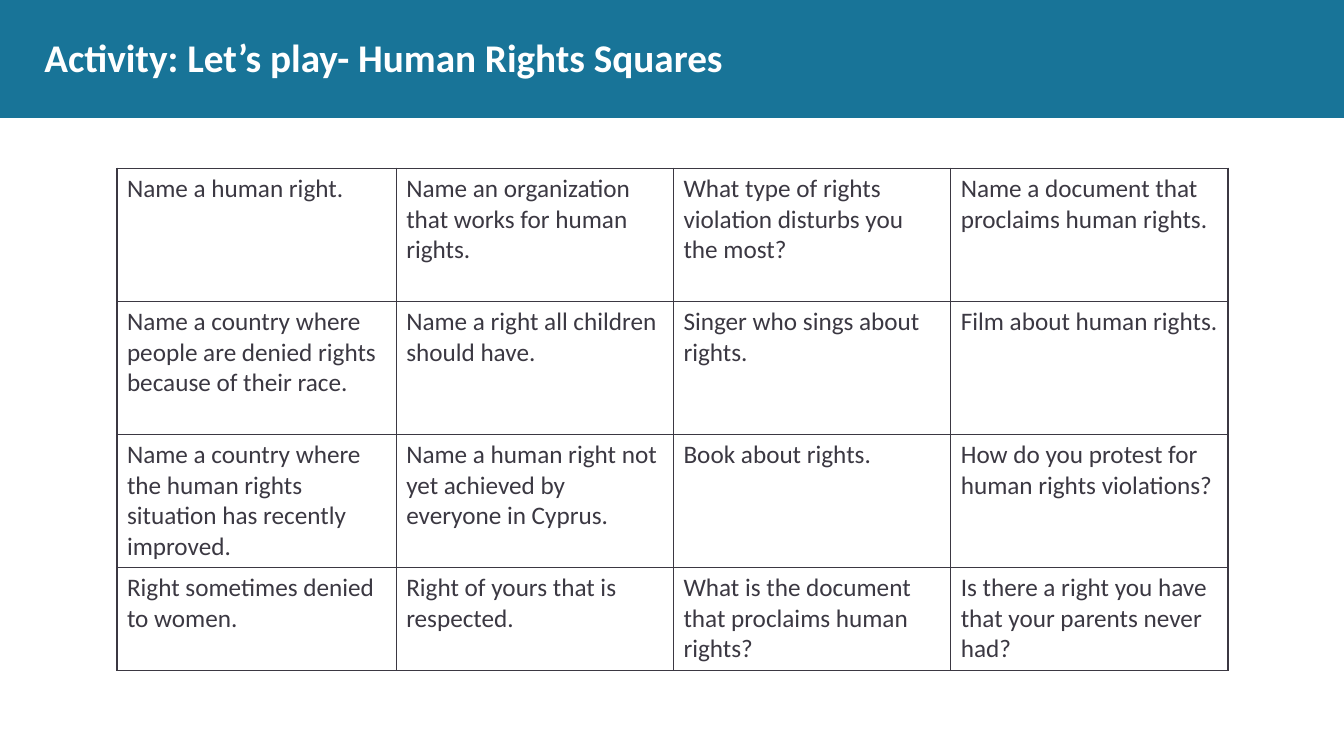
from lxml.etree import SubElement
from pptx import Presentation
from pptx.dml.color import RGBColor
from pptx.enum.shapes import MSO_SHAPE
from pptx.enum.text import MSO_ANCHOR
from pptx.oxml.ns import qn
from pptx.util import Inches, Pt

BLUE = RGBColor(0x18, 0x74, 0x98)
INK = RGBColor(0x3B, 0x38, 0x42)
WHITE = RGBColor(0xFF, 0xFF, 0xFF)

SQUARES = [
    ["Name a human right.",
     "Name an organization that works for human rights.",
     "What type of rights violation disturbs you the most?",
     "Name a document that proclaims human rights."],
    ["Name a country where people are denied rights because of their race.",
     "Name a right all children should have.",
     "Singer who sings about rights.",
     "Film about human rights."],
    ["Name a country where the human rights situation has recently improved.",
     "Name a human right not yet achieved by everyone in Cyprus.",
     "Book about rights.",
     "How do you protest for human rights violations?"],
    ["Right sometimes denied to women.",
     "Right of yours that is respected.",
     "What is the document that proclaims human rights?",
     "Is there a right you have that your parents never had?"],
]
WIDTHS = [2.77] + [2.75] * 3
HEIGHTS = [1.32] * 3 + [1.02]


def style(para, size, color, bold=False):
    font = para.font
    font.name = "Calibri"
    font.size = Pt(size)
    font.bold = bold
    font.color.rgb = color


def frame(cell):
    props = cell._tc.get_or_add_tcPr()
    for i, side in enumerate(["lnL", "lnR", "lnT", "lnB"]):
        line = SubElement(props, qn("a:" + side), w=str(Pt(1)))
        fill = SubElement(line, qn("a:solidFill"))
        SubElement(fill, qn("a:srgbClr"), val=str(INK))
        props.insert(i, line)


deck = Presentation()
deck.slide_width = Inches(13.33)
deck.slide_height = Inches(7.5)
slide = deck.slides.add_slide(deck.slide_layouts[6])

band = slide.shapes.add_shape(
    MSO_SHAPE.RECTANGLE, 0, 0, deck.slide_width, Inches(1.17))
band.shadow.inherit = False
band.fill.solid()
band.fill.fore_color.rgb = BLUE
band.line.fill.background()

title = slide.shapes.add_textbox(
    Inches(0.44), Inches(0.19), Inches(12.46), Inches(0.74))
text = title.text_frame
text.word_wrap = True
text.vertical_anchor = MSO_ANCHOR.MIDDLE
text.margin_left = text.margin_right = 0
text.margin_top = text.margin_bottom = 0
text.text = "Activity: Let’s play- Human Rights Squares"
style(text.paragraphs[0], 28, WHITE, True)

board = slide.shapes.add_table(
    len(HEIGHTS), len(WIDTHS), Inches(1.16), Inches(1.67),
    Inches(sum(WIDTHS)), Inches(sum(HEIGHTS))).table
board.first_row = False
board.horz_banding = False
for col, width in zip(board.columns, WIDTHS):
    col.width = Inches(width)
for row, height, prompts in zip(board.rows, HEIGHTS, SQUARES):
    row.height = Inches(height)
    for cell, prompt in zip(row.cells, prompts):
        cell.text = prompt
        style(cell.text_frame.paragraphs[0], 18, INK)
        cell.fill.solid()
        cell.fill.fore_color.rgb = WHITE
        frame(cell)

deck.save("out.pptx")
